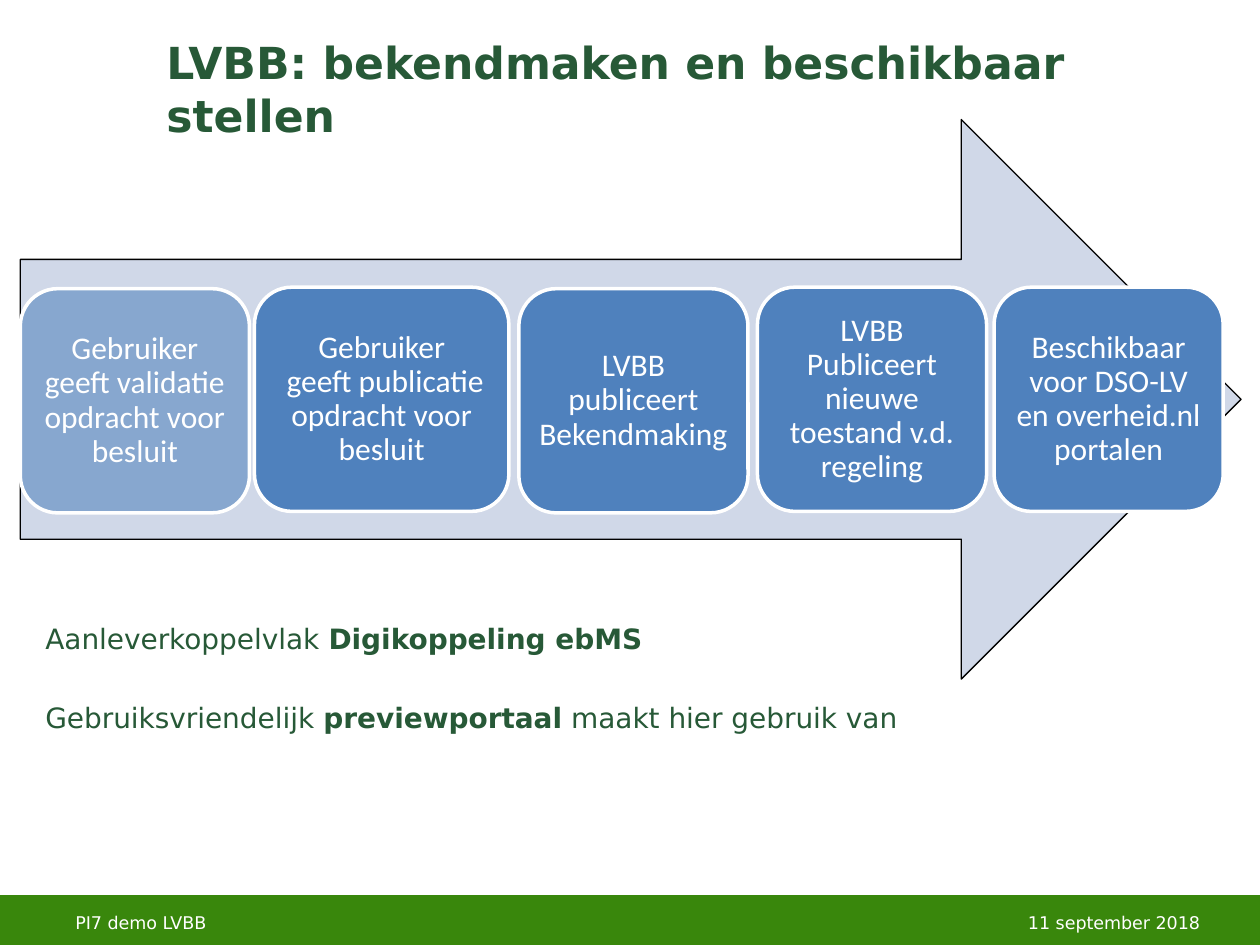
from pptx import Presentation
from pptx import util as u
from pptx.dml.color import RGBColor
from pptx.enum import shapes, text
from pptx.oxml.ns import qn
from lxml import etree

GREEN = RGBColor(0x39, 0x87, 0x0C)
DARK = RGBColor(0x27, 0x59, 0x37)
BLUE = RGBColor(0x4F, 0x81, 0xBD)
PALE = RGBColor(0xD0, 0xD8, 0xE8)
WHITE = RGBColor(0xFF, 0xFF, 0xFF)
BLACK = RGBColor(0, 0, 0)
SANS = "DejaVu Sans"
KIND = shapes.MSO_SHAPE
LEFT, MID, RIGHT = text.PP_ALIGN.LEFT, text.PP_ALIGN.CENTER, text.PP_ALIGN.RIGHT

TITLE = "LVBB: bekendmaken en beschikbaar stellen"
NOTES = [
    [("Aanleverkoppelvlak ", False), ("Digikoppeling ebMS", True)],
    [("Gebruiksvriendelijk ", False), ("previewportaal", True),
     (" maakt hier gebruik van", False)],
]
STEPS = [
    ("Gebruiker geeft validatie opdracht voor besluit", 0.41, 5.82, 4.62),
    ("Gebruiker\v geeft publicatie opdracht voor besluit", 5.13, 5.79, 5.13),
    ("LVBB publiceert Bekendmaking", 10.46, 5.82, 4.62),
    ("LVBB Publiceert nieuwe toestand v.d. regeling", 15.27, 5.79, 4.62),
    ("Beschikbaar voor DSO-LV en overheid.nl portalen", 20.04, 5.79, 4.62),
]
FOOT = [
    ("PI7 demo LVBB", 1.27, 8.05, LEFT),
    ("11 september 2018", 18.52, 5.92, RIGHT),
]


def style(run, name, size, color, bold=False):
    font = run.font
    font.name, font.size, font.bold = name, u.Pt(size), bold
    font.color.rgb = color


def place(item, *box):
    item.left, item.top, item.width, item.height = map(u.Cm, box)


def shape(kind, box, fill, line, width):
    item = slide.shapes.add_shape(kind, *map(u.Cm, box))
    item.shadow.inherit = False
    item.fill.solid()
    item.fill.fore_color.rgb = fill
    item.line.color.rgb = line
    item.line.width = u.Pt(width)
    return item


deck = Presentation()
deck.slide_width, deck.slide_height = u.Cm(25.4), u.Cm(19.05)
slide = deck.slides.add_slide(deck.slide_layouts[1])

head, body = slide.placeholders
place(head, 3.1, 0.58, 22.3, 1.85)
frame = head.text_frame
frame.text = TITLE
frame.word_wrap = False
frame.auto_size = text.MSO_AUTO_SIZE.NONE
frame.vertical_anchor = text.MSO_ANCHOR.TOP
frame.paragraphs[0].alignment = LEFT
style(frame.paragraphs[0].runs[0], SANS, 25.2, DARK, True)

place(body, 0.66, 12.4, 23.77, 4)
frame = body.text_frame
frame.auto_size = text.MSO_AUTO_SIZE.NONE
for i, parts in enumerate(NOTES):
    para = frame.add_paragraph() if i else frame.paragraphs[0]
    props = para._p.get_or_add_pPr()
    props.set("marL", "0")
    props.set("indent", "0")
    etree.SubElement(props, qn("a:buNone"))
    para.space_before = u.Pt(26 if i else 0)
    for words, bold in parts:
        run = para.add_run()
        run.text = words
        style(run, SANS, 16, DARK, bold)

shape(KIND.RECTANGLE, (0, 18.08, 25.4, 0.97), GREEN, GREEN, 2)
for words, left, wide, side in FOOT:
    label = slide.shapes.add_textbox(*map(u.Cm, (left, 18.14, wide, 0.91)))
    frame = label.text_frame
    frame.word_wrap = True
    frame.vertical_anchor = text.MSO_ANCHOR.MIDDLE
    frame.text = words
    para = frame.paragraphs[0]
    para.alignment = side
    style(para.runs[0], SANS, 10, WHITE)

shape(KIND.RIGHT_ARROW, (0.41, 2.41, 24.61, 11.28), PALE, BLACK, 0.75)
for i, (words, left, top, wide) in enumerate(STEPS):
    step = shape(KIND.ROUNDED_RECTANGLE, (left, top, wide, 4.52), BLUE, WHITE, 2)
    if i == 0:
        tint = step.fill._xPr.find(qn("a:solidFill"))[0]
        etree.SubElement(tint, qn("a:alpha")).set("val", "56000")
    frame = step.text_frame
    frame.margin_left = frame.margin_right = u.Cm(0.18)
    frame.margin_top = frame.margin_bottom = u.Cm(0.18)
    frame.word_wrap = True
    frame.vertical_anchor = text.MSO_ANCHOR.MIDDLE
    frame.text = words
    para = frame.paragraphs[0]
    para.alignment = MID
    para.line_spacing = 0.9
    for run in para.runs:
        style(run, "Calibri", 18, WHITE)

deck.save("out.pptx")
